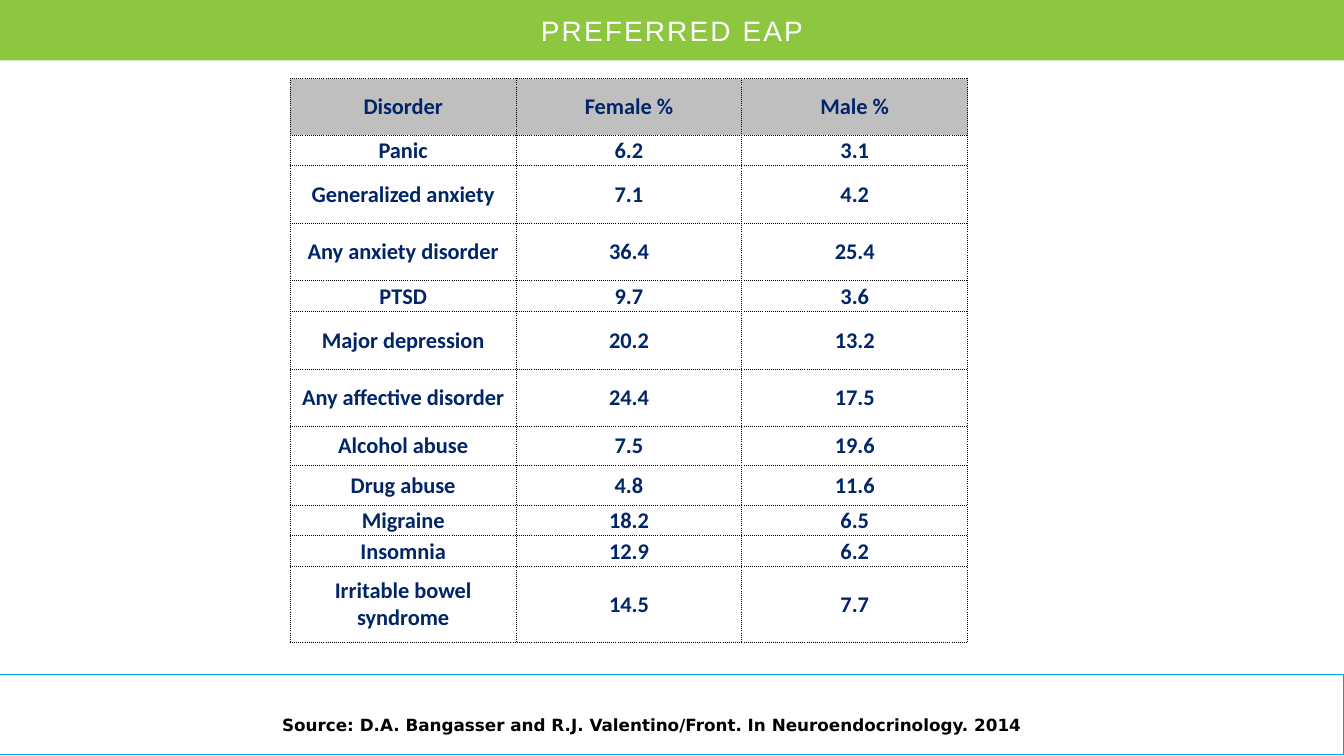
from dataclasses import dataclass

from lxml import etree
from pptx import Presentation
from pptx.dml.color import RGBColor
from pptx.enum.shapes import MSO_SHAPE
from pptx.enum.text import MSO_ANCHOR, MSO_AUTO_SIZE, PP_ALIGN
from pptx.oxml.ns import qn
from pptx.util import Inches, Pt

RECTANGLE = MSO_SHAPE.RECTANGLE
MIDDLE = MSO_ANCHOR.MIDDLE
GROW = MSO_AUTO_SIZE.SHAPE_TO_FIT_TEXT
CENTER, LEFT = PP_ALIGN.CENTER, PP_ALIGN.LEFT
TITLE_ONLY = 5
COLUMNS, ROWS = 40, 30

DISORDERS = [
    ("Disorder", "Female %", "Male %"),
    ("Panic", "6.2", "3.1"),
    ("Generalized anxiety", "7.1", "4.2"),
    ("Any anxiety disorder", "36.4", "25.4"),
    ("PTSD", "9.7", "3.6"),
    ("Major depression", "20.2", "13.2"),
    ("Any affective disorder", "24.4", "17.5"),
    ("Alcohol abuse", "7.5", "19.6"),
    ("Drug abuse", "4.8", "11.6"),
    ("Migraine", "18.2", "6.5"),
    ("Insomnia", "12.9", "6.2"),
    ("Irritable bowel syndrome", "14.5", "7.7"),
]
SINGLE, MEDIUM, TALL = 1.2, 1.56, 2.28
ROW_HEIGHTS = [2.24, SINGLE, TALL, TALL, SINGLE, TALL, TALL,
               MEDIUM, MEDIUM, SINGLE, SINGLE, 3]


@dataclass(frozen=True)
class TextStyle:
    font: str
    size: float
    color: str
    bold: bool = False
    spacing: float = 0


@dataclass(frozen=True)
class Theme:
    band: str = "8DC63F"
    outline: str = "00A4E4"
    header: str = "BFBFBF"
    border: str = "000000"
    line_width: float = 0.75
    heading: TextStyle = TextStyle("Arial", 20, "FFFFFF", spacing=1.5)
    cell: TextStyle = TextStyle("Calibri", 16, "002669", bold=True)
    source: TextStyle = TextStyle("DejaVu Sans", 12, "000000", bold=True)


class SlideBuilder:
    def __init__(self, presentation, theme):
        self.theme = theme
        self.column = presentation.slide_width / COLUMNS
        self.row = presentation.slide_height / ROWS
        self.slide = presentation.slides.add_slide(
            presentation.slide_layouts[TITLE_ONLY])

    def place(self, left, top, width, height):
        """Turn grid columns and rows into slide lengths."""
        return (round(left * self.column), round(top * self.row),
                round(width * self.column), round(height * self.row))

    def set_text(self, frame, text, style, align):
        frame.text = text
        paragraph = frame.paragraphs[0]
        paragraph.alignment = align
        font = paragraph.runs[0].font
        font.name, font.size, font.bold = style.font, Pt(style.size), style.bold
        font.color.rgb = RGBColor.from_string(style.color)
        if style.spacing:
            font._element.set("spc", str(round(style.spacing * 100)))
        return paragraph

    def rectangle(self, area, fill=None, line=None):
        shape = self.slide.shapes.add_shape(RECTANGLE, *self.place(*area))
        shape.shadow.inherit = False
        if fill:
            shape.fill.solid()
            shape.fill.fore_color.rgb = RGBColor.from_string(fill)
        else:
            shape.fill.background()
        if line:
            shape.line.color.rgb = RGBColor.from_string(line)
            shape.line.width = Pt(self.theme.line_width)
        else:
            shape.line.fill.background()

    def heading(self, area, text):
        """Fill the title placeholder and bring it in front of the band."""
        title = self.slide.shapes.title
        title.left, title.top, title.width, title.height = self.place(*area)
        frame = title.text_frame
        frame.word_wrap, frame.auto_size = True, GROW
        frame.vertical_anchor = MIDDLE
        self.set_text(frame, text, self.theme.heading, CENTER)
        self.slide.shapes._spTree.append(title._element)

    def source(self, area, text):
        frame = self.slide.shapes.add_textbox(*self.place(*area)).text_frame
        frame.word_wrap, frame.auto_size = True, GROW
        frame.vertical_anchor = MIDDLE
        frame.margin_top, frame.margin_bottom = Inches(0.17), 0
        self.set_text(frame, text, self.theme.source, LEFT).line_spacing = 0.9

    def dot_borders(self, cell):
        properties = cell._tc.get_or_add_tcPr()
        for side in ("a:lnL", "a:lnR", "a:lnT", "a:lnB"):
            line = etree.SubElement(properties, qn(side),
                                    w=str(Pt(self.theme.line_width)))
            fill = etree.SubElement(line, qn("a:solidFill"))
            etree.SubElement(fill, qn("a:srgbClr"), val=self.theme.border)
            etree.SubElement(line, qn("a:prstDash"), val="sysDot")

    def table(self, left, top, width, heights, records):
        area = self.place(left, top, width, sum(heights))
        table = self.slide.shapes.add_table(
            len(records), len(records[0]), *area).table
        table.first_row = table.horz_banding = False
        for index, (record, height) in enumerate(zip(records, heights)):
            table.rows[index].height = round(height * self.row)
            for cell, text in zip(table.rows[index].cells, record):
                self.dot_borders(cell)
                if index == 0:
                    cell.fill.solid()
                    cell.fill.fore_color.rgb = RGBColor.from_string(
                        self.theme.header)
                else:
                    cell.fill.background()
                cell.margin_left = cell.margin_right = Inches(0.02)
                cell.margin_top = cell.margin_bottom = Inches(0.02)
                cell.vertical_anchor = MIDDLE
                self.set_text(cell.text_frame, text, self.theme.cell, CENTER)


def main():
    presentation = Presentation()
    presentation.slide_width = Inches(13.33)
    presentation.slide_height = Inches(7.5)
    theme = Theme()
    builder = SlideBuilder(presentation, theme)
    builder.rectangle((0, 26.76, COLUMNS, 3.2), line=theme.outline)
    builder.rectangle((0, 0, COLUMNS, 2.4), fill=theme.band)
    builder.heading((0.15, 0.32, 39.7, 1.76), "PREFERRED EAP")
    builder.table(8.64, 3.12, 20.16, ROW_HEIGHTS, DISORDERS)
    builder.source(
        (8.1, 27.76, 23.4, 1.44),
        "Source: D.A. Bangasser and R.J. Valentino/Front. "
        "In Neuroendocrinology. 2014")
    presentation.save("out.pptx")


if __name__ == "__main__":
    main()
